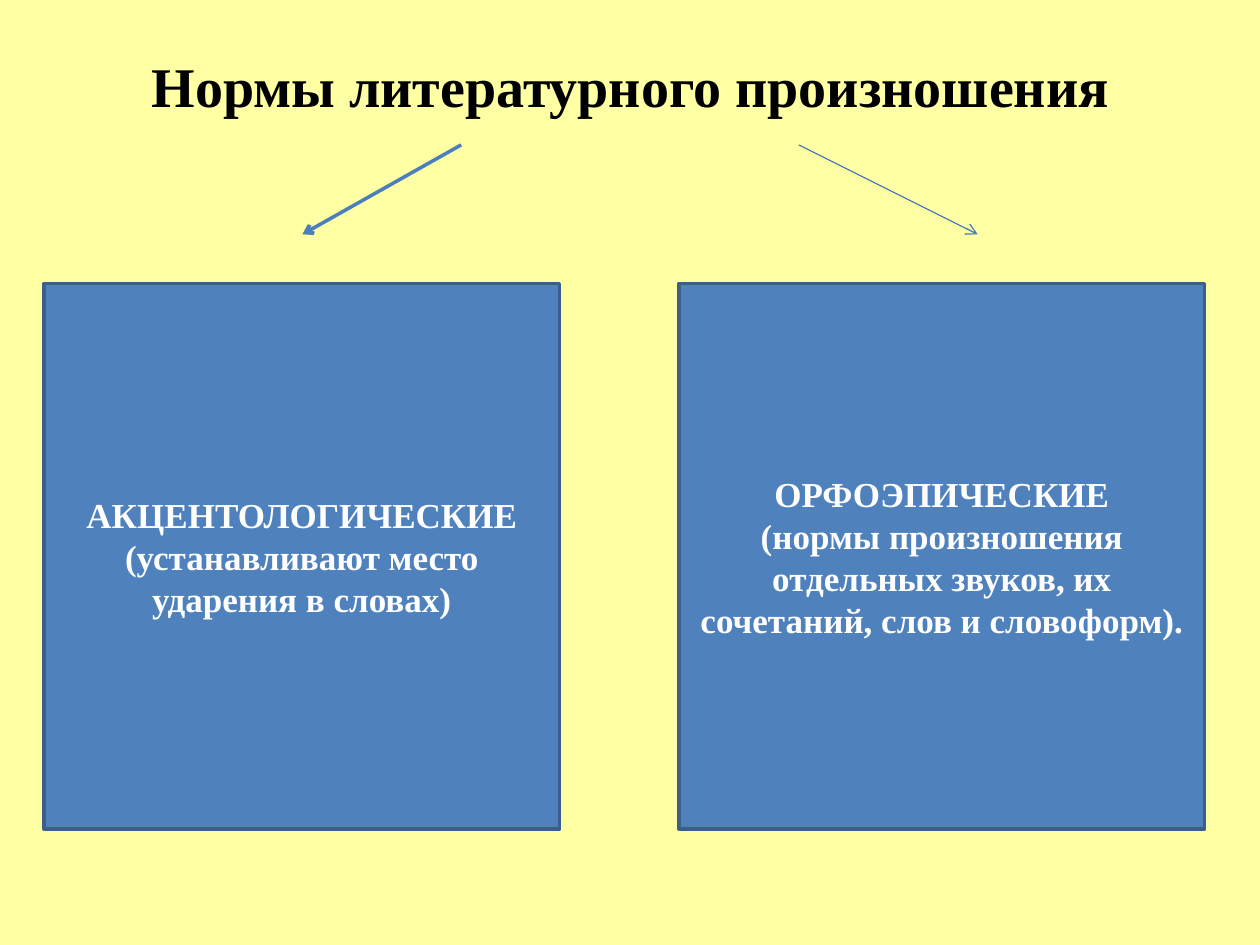
from lxml import etree
from pptx import Presentation
from pptx import util as u
from pptx.dml.color import RGBColor
from pptx.enum import shapes, text
from pptx.oxml.ns import qn

CREAM = RGBColor(0xFF, 0xFF, 0xA3)
BLUE = RGBColor(0x4F, 0x81, 0xBD)
EDGE = RGBColor(0x3A, 0x5F, 0x8C)
ARROW = RGBColor(0x4B, 0x7E, 0xBC)
BLACK = RGBColor(0, 0, 0)
WHITE = RGBColor(0xFF, 0xFF, 0xFF)


class Deck:
    """Holds the style and the current slide; lengths are cells of a 100 x 75 grid."""

    face = {"name": "Times New Roman", "bold": True}

    def __init__(self, prs):
        self.slide = prs.slides.add_slide(prs.slide_layouts[1])
        self.cell = prs.slide_width / 100
        fill = self.slide.background.fill
        fill.solid()
        fill.fore_color.rgb = CREAM

    def grid(self, *cells):
        return [u.Emu(round(c * self.cell)) for c in cells]

    def label(self, frame, lines, size, color):
        frame.text = "\n".join(lines)
        for para in frame.paragraphs:
            para.alignment = text.PP_ALIGN.CENTER
            font = para.runs[0].font
            for key, value in {**self.face, "size": u.Pt(size)}.items():
                setattr(font, key, value)
            font.color.rgb = color

    def body(self, area, line):
        title = self.slide.shapes.title
        title.element.getparent().remove(title.element)
        hold = self.slide.placeholders[1]
        for key, value in zip(("left", "top", "width", "height"), self.grid(*area)):
            setattr(hold, key, value)
        self.label(hold.text_frame, [line], 32, BLACK)
        props = hold.text_frame.paragraphs[0]._p.get_or_add_pPr()
        etree.SubElement(props, qn("a:buNone"))

    def box(self, area, lines):
        box = self.slide.shapes.add_shape(shapes.MSO_SHAPE.RECTANGLE, *self.grid(*area))
        box.shadow.inherit = False
        box.fill.solid()
        box.fill.fore_color.rgb = BLUE
        box.line.color.rgb = EDGE
        box.line.width = u.Pt(2)
        box.text_frame.word_wrap = True
        box.text_frame.vertical_anchor = text.MSO_ANCHOR.MIDDLE
        self.label(box.text_frame, lines, 20, WHITE)

    def arrow(self, start, end, width):
        line = self.slide.shapes.add_connector(
            shapes.MSO_CONNECTOR.STRAIGHT, *self.grid(*start, *end))
        line.line.color.rgb = ARROW
        line.line.width = u.Pt(width)
        etree.SubElement(line.line._get_or_add_ln(), qn("a:tailEnd"), type="arrow")
        etree.SubElement(line._element.spPr, qn("a:effectLst"))


def main():
    prs = Presentation()
    prs.slide_width, prs.slide_height = u.Inches(10), u.Inches(7.5)
    deck = Deck(prs)

    # Heading
    deck.body((2.8, 3.6, 94.5, 67.7), "Нормы литературного произношения")

    # Two kinds of norms
    top, high = 22.5, 43.3
    deck.box((3.5, top, 40.9, high),
             ["АКЦЕНТОЛОГИЧЕСКИЕ", "(устанавливают место ударения в словах)"])
    deck.box((53.9, top, 41.7, high),
             ["ОРФОЭПИЧЕСКИЕ",
              "(нормы произношения отдельных звуков, их сочетаний, слов и словоформ)."])

    # Arrows from the heading to the boxes
    for x1, x2, width in ((36.6, 24, 2), (63.4, 77.6, 0.75)):
        deck.arrow((x1, 11.5), (x2, 18.6), width)

    prs.save("out.pptx")


if __name__ == "__main__":
    main()
